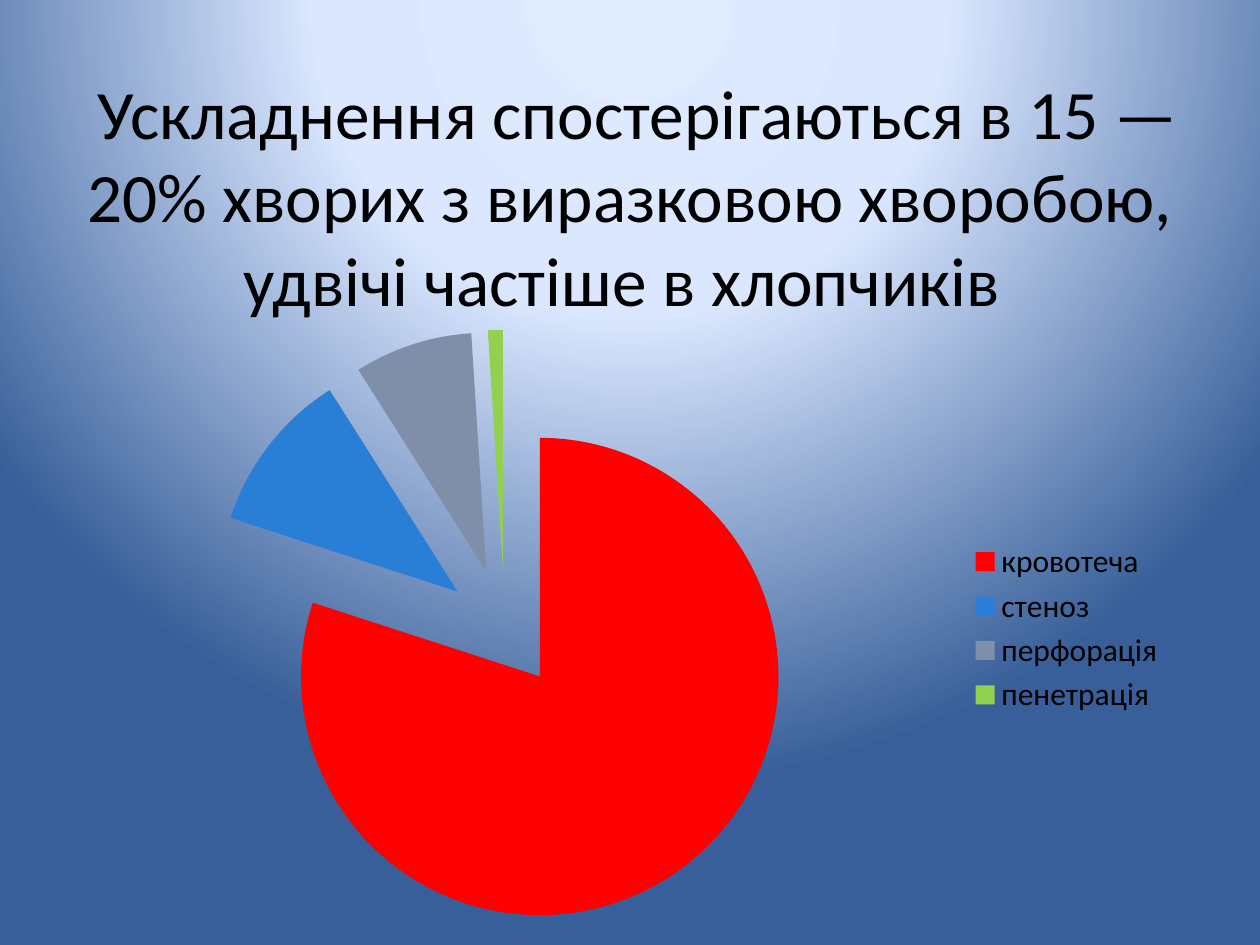
"""Build a slide with a headline over an exploded pie of ulcer complications."""
from dataclasses import dataclass

from lxml import etree
from pptx import Presentation
from pptx import util as u
from pptx.chart.data import CategoryChartData
from pptx.dml.color import RGBColor
from pptx.enum import chart as kinds
from pptx.enum import text
from pptx.oxml import parse_xml
from pptx.oxml.ns import nsdecls, qn
from pptx.slide import Slide

FONT = "Calibri"
BLACK = RGBColor(0x00, 0x00, 0x00)
RED = RGBColor(0xFF, 0x00, 0x00)
BLUE = RGBColor(0x29, 0x7F, 0xD5)
GREY = RGBColor(0x7F, 0x8F, 0xA9)
GREEN = RGBColor(0x92, 0xD0, 0x50)
PALE = RGBColor(0xE0, 0xEB, 0xFF)
LIGHT = RGBColor(0xDA, 0xE7, 0xFF)
NAVY = RGBColor(0x38, 0x5F, 0x99)
GLOW = ((0, PALE), (40, LIGHT), (100, NAVY))
HEAD = " Ускладнення спостерiгаються в 15 — 20% хворих з виразковою хворобою, удвiчi частiше в хлопчикiв "


@dataclass(frozen=True)
class Box:
    left: float
    top: float
    width: float
    height: float

    def lengths(self) -> tuple[u.Cm, ...]:
        return tuple(map(u.Cm, (self.left, self.top, self.width, self.height)))


@dataclass(frozen=True)
class Slice:
    name: str
    share: int
    color: RGBColor


SLICES = (
    Slice("кровотеча", 80, RED),
    Slice("стеноз", 11, BLUE),
    Slice("перфорація", 8, GREY),
    Slice("пенетрація", 1, GREEN),
)


def set_font(font, size: float) -> None:
    font.name, font.size = FONT, u.Pt(size)
    font.color.rgb = BLACK


def add_glow(slide: Slide) -> None:
    stops = "".join(
        f'<a:gs pos="{place * 1000}"><a:srgbClr val="{color}"/></a:gs>'
        for place, color in GLOW
    )
    back = parse_xml(
        f'<p:bg {nsdecls("p", "a")}><p:bgPr><a:gradFill rotWithShape="1">'
        f'<a:gsLst>{stops}</a:gsLst><a:path path="circle">'
        '<a:fillToRect l="50000" t="-80000" r="50000" b="180000"/></a:path>'
        "</a:gradFill><a:effectLst/></p:bgPr></p:bg>"
    )
    slide.element.cSld.insert(0, back)


def add_head(slide: Slide, box: Box) -> None:
    frame = slide.shapes.add_textbox(*box.lengths()).text_frame
    frame.word_wrap = True
    frame.vertical_anchor = text.MSO_ANCHOR.MIDDLE
    line = frame.paragraphs[0]
    line.text = HEAD
    line.alignment = text.PP_ALIGN.CENTER
    set_font(line.font, 39.6)


def add_pie(slide: Slide, box: Box, slices: tuple[Slice, ...], burst: int) -> None:
    data = CategoryChartData()
    data.categories = [part.name for part in slices]
    data.add_series("Series 1", [part.share for part in slices])
    chart = slide.shapes.add_chart(
        kinds.XL_CHART_TYPE.PIE, *box.lengths(), data
    ).chart
    set_font(chart.font, 18)
    chart.has_title = False
    chart.has_legend = True
    chart.legend.position = kinds.XL_LEGEND_POSITION.RIGHT
    chart.legend.include_in_layout = False
    plot = chart.plots[0]
    plot.vary_by_categories = True
    series = plot.series[0]
    for index, part in enumerate(slices):
        fill = series.points[index].format.fill
        fill.solid()
        fill.fore_color.rgb = part.color
    spread = etree.Element(qn("c:explosion"), val=str(burst))
    series._element.find(qn("c:dPt")).addprevious(spread)


def main() -> None:
    deck = Presentation()
    deck.slide_width, deck.slide_height = u.Cm(25.4), u.Cm(19.05)
    slide = deck.slides.add_slide(deck.slide_layouts[6])
    add_glow(slide)
    add_head(slide, Box(1.27, 0.76, 22.86, 6.35))
    add_pie(slide, Box(0.89, 6.3, 22.86, 12.73), SLICES, 25)
    deck.save("out.pptx")


if __name__ == "__main__":
    main()
